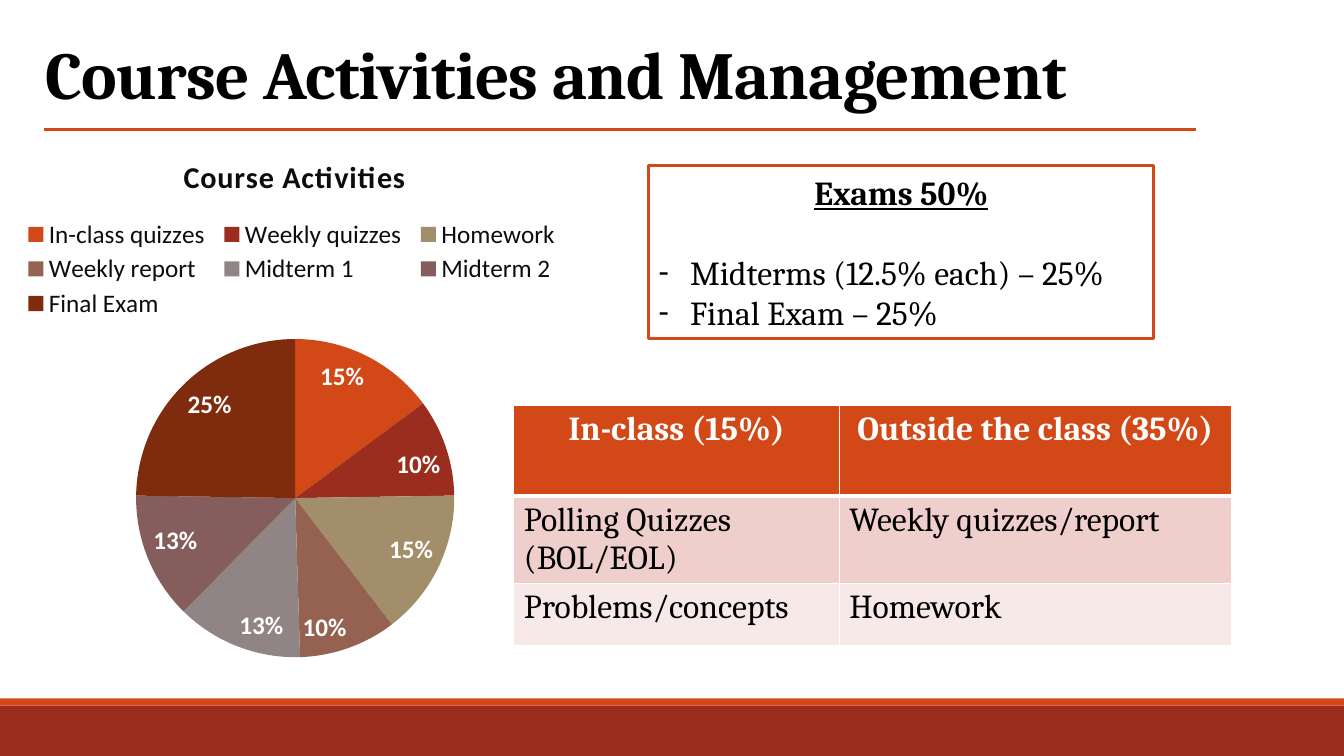
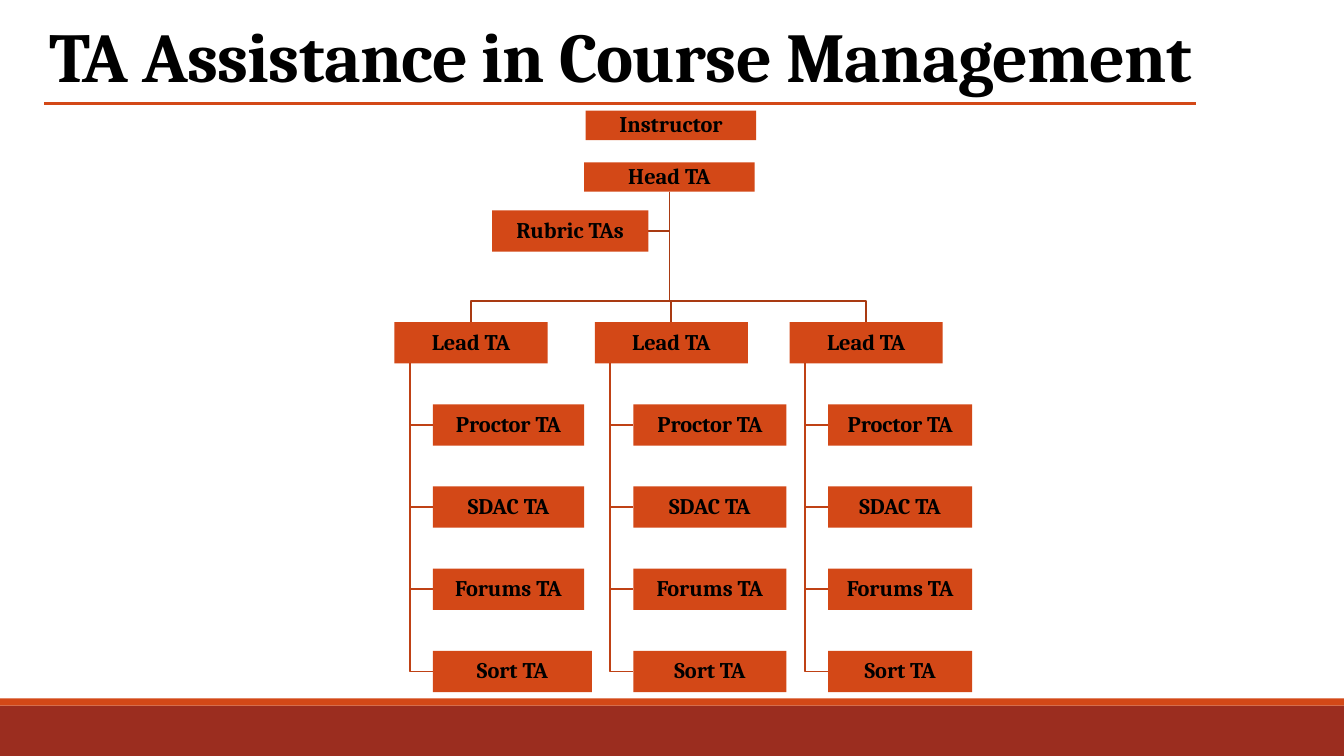
"""Build two slides on course activities and teaching assistant roles."""
from dataclasses import dataclass
from typing import Any, NamedTuple

import lxml.etree
import pptx
import pptx.chart.data
import pptx.dml.color
import pptx.enum.chart
import pptx.enum.shapes
import pptx.enum.text
import pptx.oxml.ns
import pptx.util

Cm = pptx.util.Cm
Pt = pptx.util.Pt
qn = pptx.oxml.ns.qn
Align = pptx.enum.text.PP_ALIGN
Anchor = pptx.enum.text.MSO_ANCHOR


@dataclass(frozen=True)
class Theme:
    orange: str = "D34817"
    red: str = "9B2D1F"
    dark_line: str = "A93A12"
    branch_line: str = "BF4115"
    black: str = "000000"
    white: str = "FFFFFF"
    chart_text: str = "0D0D0D"
    row_fills: tuple[str, ...] = ("D34817", "EFCFCC", "F7E9E8")
    heading_font: str = "Cambria"
    chart_font: str = "Calibri"
    body_size: float = 24
    box_size: float = 16
    chart_size: float = 18
    chart_title_size: float = 21.6
    rule_width: float = 2.25
    branch_width: float = 1.25


THEME = Theme()


class Box(NamedTuple):
    left: float
    top: float
    width: float
    height: float

    def lengths(self) -> tuple[Any, ...]:
        return tuple(Cm(value) for value in self)


class Heading(NamedTuple):
    text: str
    box: Box
    size: float
    alignment: Any
    rule_top: float


class Activity(NamedTuple):
    name: str
    percent: int
    color: str


class Team(NamedTuple):
    left: float
    width: float
    last_width: float

    @property
    def center(self) -> float:
        return self.left + 1.93


HEADINGS = (
    Heading("Course Activities and Management", Box(0.9, 0.64, 29.59, 2.62), 48, Align.LEFT, 3.26),
    Heading("TA Assistance in Course Management", Box(0.16, -0.15, 30.96, 3.33), 50, Align.CENTER, 2.6),
)
ACTIVITIES = (
    Activity("In-class quizzes", 15, "D34817"),
    Activity("Weekly quizzes", 10, "9B2D1F"),
    Activity("Homework", 15, "A28E6A"),
    Activity("Weekly report", 10, "956251"),
    Activity("Midterm 1", 13, "918485"),
    Activity("Midterm 2", 13, "855D5D"),
    Activity("Final Exam", 25, "7F2B0E"),
)
WORK_ROWS = (
    ("In-class (15%)", "Outside the class (35%)"),
    ("Polling Quizzes (BOL/EOL)", "Weekly quizzes/report"),
    ("Problems/concepts", "Homework"),
)
TEAMS = (Team(9.94, 3.81, 4.01), Team(14.99, 3.86, 3.86), Team(19.9, 3.63, 3.63))
ROLES = ("Proctor TA", "SDAC TA", "Forums TA", "Sort TA")


def rgb(color: str) -> Any:
    return pptx.dml.color.RGBColor.from_string(color)


def apply(target: Any, **values: Any) -> None:
    for name, value in values.items():
        setattr(target, name, value)


def style_font(font: Any, size: float, color: str, bold: bool = False,
               name: str = THEME.heading_font, **values: Any) -> None:
    apply(font, size=Pt(size), bold=bold, name=name, **values)
    font.color.rgb = rgb(color)


def add_rectangle(slide: Any, box: Box, fill: str | None = None, line: str | None = None) -> Any:
    shape = slide.shapes.add_shape(pptx.enum.shapes.MSO_SHAPE.RECTANGLE, *box.lengths())
    shape.shadow.inherit = False
    if fill:
        shape.fill.solid()
        shape.fill.fore_color.rgb = rgb(fill)
    else:
        shape.fill.background()
    if line:
        shape.line.color.rgb = rgb(line)
        shape.line.width = Pt(THEME.rule_width)
    else:
        shape.line.fill.background()
    return shape


def add_rule(slide: Any, top: float) -> None:
    points = (Cm(value) for value in (1.12, top, 30.13, top))
    connector = slide.shapes.add_connector(pptx.enum.shapes.MSO_CONNECTOR.STRAIGHT, *points)
    connector.line.color.rgb = rgb(THEME.orange)
    connector.line.width = Pt(THEME.rule_width)
    lxml.etree.SubElement(connector.element.spPr, qn("a:effectLst"))


def add_elbow(slide: Any, color: str, *points: tuple[float, float]) -> None:
    start, *corners = [(Cm(x), Cm(y)) for x, y in points]
    builder = slide.shapes.build_freeform(*start)
    builder.add_line_segments(corners, close=False)
    shape = builder.convert_to_shape()
    shape.shadow.inherit = False
    shape.fill.background()
    shape.line.color.rgb = rgb(color)
    shape.line.width = Pt(THEME.branch_width)


def add_base_slide(presentation: Any, heading: Heading) -> Any:
    slide = presentation.slides.add_slide(presentation.slide_layouts[5])
    add_rectangle(slide, Box(0, 17.78, 33.87, 1.27), THEME.red)
    add_rectangle(slide, Box(0, 17.6, 33.87, 0.18), THEME.orange)
    add_rule(slide, heading.rule_top)
    title = slide.shapes.title
    apply(title, **dict(zip(Box._fields, heading.box.lengths())))
    frame = title.text_frame
    apply(frame, text=heading.text, word_wrap=True, vertical_anchor=Anchor.MIDDLE,
          auto_size=pptx.enum.text.MSO_AUTO_SIZE.NONE)
    paragraph = frame.paragraphs[0]
    apply(paragraph, alignment=heading.alignment, line_spacing=0.9)
    run = paragraph.runs[0]
    style_font(run.font, heading.size, THEME.black, True)
    run._r.get_or_add_rPr().set("spc", "-50")
    return slide


def set_layout(element: Any, index: int, **values: Any) -> None:
    for layout in element.findall(qn("c:layout")):
        element.remove(layout)
    layout = lxml.etree.Element(qn("c:layout"))
    manual = lxml.etree.SubElement(layout, qn("c:manualLayout"))
    for name, value in values.items():
        lxml.etree.SubElement(manual, qn(f"c:{name}")).set("val", str(value))
    element.insert(index, layout)


def add_activity_chart(slide: Any) -> None:
    data = pptx.chart.data.CategoryChartData()
    data.categories = [activity.name for activity in ACTIVITIES]
    data.add_series("Series 1", [activity.percent for activity in ACTIVITIES])
    chart = slide.shapes.add_chart(pptx.enum.chart.XL_CHART_TYPE.PIE,
                                   *Box(-1.78, 3.38, 18.44, 13.59).lengths(), data).chart
    calibri = {"name": THEME.chart_font}
    style_font(chart.font, THEME.chart_size, THEME.chart_text, **calibri)
    apply(chart, has_title=True, has_legend=True)
    frame = chart.chart_title.text_frame
    frame.text = "Course Activities"
    run = frame.paragraphs[0].runs[0]
    style_font(run.font, THEME.chart_title_size, THEME.chart_text, True, **calibri)
    run._r.get_or_add_rPr().set("spc", "50")
    apply(chart.legend, position=pptx.enum.chart.XL_LEGEND_POSITION.TOP, include_in_layout=False)
    style_font(chart.legend.font, THEME.chart_size, THEME.chart_text, **calibri)
    plot = chart.plots[0]
    apply(plot, vary_by_categories=True, has_data_labels=True)
    labels = plot.data_labels
    apply(labels, show_percentage=True, show_value=False, number_format="0%",
          number_format_is_linked=False, position=pptx.enum.chart.XL_LABEL_POSITION.INSIDE_END)
    style_font(labels.font, THEME.chart_size, THEME.white, True, **calibri)
    for index, activity in enumerate(ACTIVITIES):
        fill = plot.series[0].points[index].format.fill
        fill.solid()
        fill.fore_color.rgb = rgb(activity.color)
    edges = {"xMode": "edge", "yMode": "edge"}
    set_layout(chart.chart_title._element, 1, **edges, x=0.34, y=0.03)
    set_layout(chart.legend._element, 1, **edges, x=0.12, y=0.15, w=0.75, h=0.2)
    set_layout(plot._element.getparent(), 0, layoutTarget="inner", **edges, x=0.28, y=0.38, w=0.44, h=0.59)


def set_cell_borders(cell: Any, widths: dict[str, float]) -> None:
    properties = cell._tc.get_or_add_tcPr()
    for index, (side, width) in enumerate(widths.items()):
        line = lxml.etree.Element(qn(f"a:ln{side}"), w=str(Pt(width)))
        fill = lxml.etree.SubElement(line, qn("a:solidFill"))
        lxml.etree.SubElement(fill, qn("a:srgbClr"), val=THEME.white)
        properties.insert(index, line)


def add_work_table(slide: Any) -> None:
    box = Box(12.95, 10.21, 18.08, 5.45)
    table = slide.shapes.add_table(len(WORK_ROWS), 2, *box.lengths()).table
    for column, width in zip(table.columns, (8.2, 9.88)):
        column.width = Cm(width)
    for row_index, (texts, height) in enumerate(zip(WORK_ROWS, (2.29, 1.57, 1.57))):
        table.rows[row_index].height = Cm(height)
        header = row_index == 0
        for column_index, text in enumerate(texts):
            cell = table.cell(row_index, column_index)
            cell.text = text
            cell.fill.solid()
            cell.fill.fore_color.rgb = rgb(THEME.row_fills[row_index])
            paragraph = cell.text_frame.paragraphs[0]
            paragraph.alignment = Align.CENTER if header else Align.LEFT
            style_font(paragraph.runs[0].font, THEME.body_size,
                       THEME.white if header else THEME.black, header)
            set_cell_borders(cell, {"L": 1, "R": 1, "T": 3 if row_index == 1 else 1,
                                    "B": 3 if header else 1})


def add_exam_box(slide: Any) -> None:
    shape = add_rectangle(slide, Box(16.35, 4.17, 12.73, 4.37), line=THEME.orange)
    frame = shape.text_frame
    apply(frame, word_wrap=True, vertical_anchor=Anchor.MIDDLE,
          text="Exams 50%\nMidterms (12.5% each) – 25%\nFinal Exam – 25%")
    heading, *items = frame.paragraphs
    apply(heading, alignment=Align.CENTER, space_after=Pt(28))
    style_font(heading.runs[0].font, THEME.body_size, THEME.black, True, underline=True)
    for paragraph in items:
        paragraph.alignment = Align.LEFT
        style_font(paragraph.runs[0].font, THEME.body_size, THEME.black)
        properties = paragraph._p.get_or_add_pPr()
        indent = Cm(0.79)
        properties.set("marL", str(indent))
        properties.set("indent", str(-indent))
        lxml.etree.SubElement(properties, qn("a:buFont"), typeface=THEME.chart_font)
        lxml.etree.SubElement(properties, qn("a:buChar"), char="-")


def add_role(slide: Any, text: str, box: Box) -> None:
    shape = add_rectangle(slide, box, THEME.orange)
    margins = {f"margin_{side}": Cm(0.03) for side in ("left", "top", "right", "bottom")}
    apply(shape.text_frame, text=text, word_wrap=True, vertical_anchor=Anchor.MIDDLE, **margins)
    paragraph = shape.text_frame.paragraphs[0]
    apply(paragraph, alignment=Align.CENTER, line_spacing=0.9)
    style_font(paragraph.runs[0].font, THEME.box_size, THEME.black, True)


def add_team(slide: Any, team: Team, top: float, height: float) -> None:
    pitch, lead_bottom = 2.07, top + height
    trunk, child_left = team.left + 0.39, team.left + 0.97
    add_role(slide, "Lead TA", Box(team.left, top, 3.86, height))
    for index, role in enumerate(ROLES, start=1):
        child_top = top + index * pitch
        middle = child_top + height / 2
        width = team.last_width if index == len(ROLES) else team.width
        add_elbow(slide, THEME.branch_line, (trunk, lead_bottom), (trunk, middle), (child_left, middle))
        add_role(slide, role, Box(child_left, child_top, width, height))


def add_staff_chart(slide: Any) -> None:
    trunk, head_bottom, bar_top, lead_top, height = 16.87, 4.83, 7.58, 8.12, 1.04
    rubric = Box(12.4, 5.3, 3.94, height)
    rubric_middle = rubric.top + height / 2
    add_elbow(slide, THEME.dark_line, (trunk, head_bottom), (trunk, rubric_middle),
              (rubric.left + rubric.width, rubric_middle))
    for team in TEAMS:
        add_elbow(slide, THEME.dark_line, (trunk, head_bottom), (trunk, bar_top),
                  (team.center, bar_top), (team.center, lead_top))
        add_team(slide, team, lead_top, height)
    add_role(slide, "Instructor", Box(14.76, 2.79, 4.3, 0.74))
    add_role(slide, "Head TA", Box(14.72, 4.09, 4.3, 0.74))
    add_role(slide, "Rubric TAs", rubric)


def main() -> None:
    presentation = pptx.Presentation()
    apply(presentation, slide_width=Cm(33.87), slide_height=Cm(19.05))
    activities, staff = (add_base_slide(presentation, heading) for heading in HEADINGS)
    add_work_table(activities)
    add_activity_chart(activities)
    add_exam_box(activities)
    add_staff_chart(staff)
    presentation.save("out.pptx")


if __name__ == "__main__":
    main()
